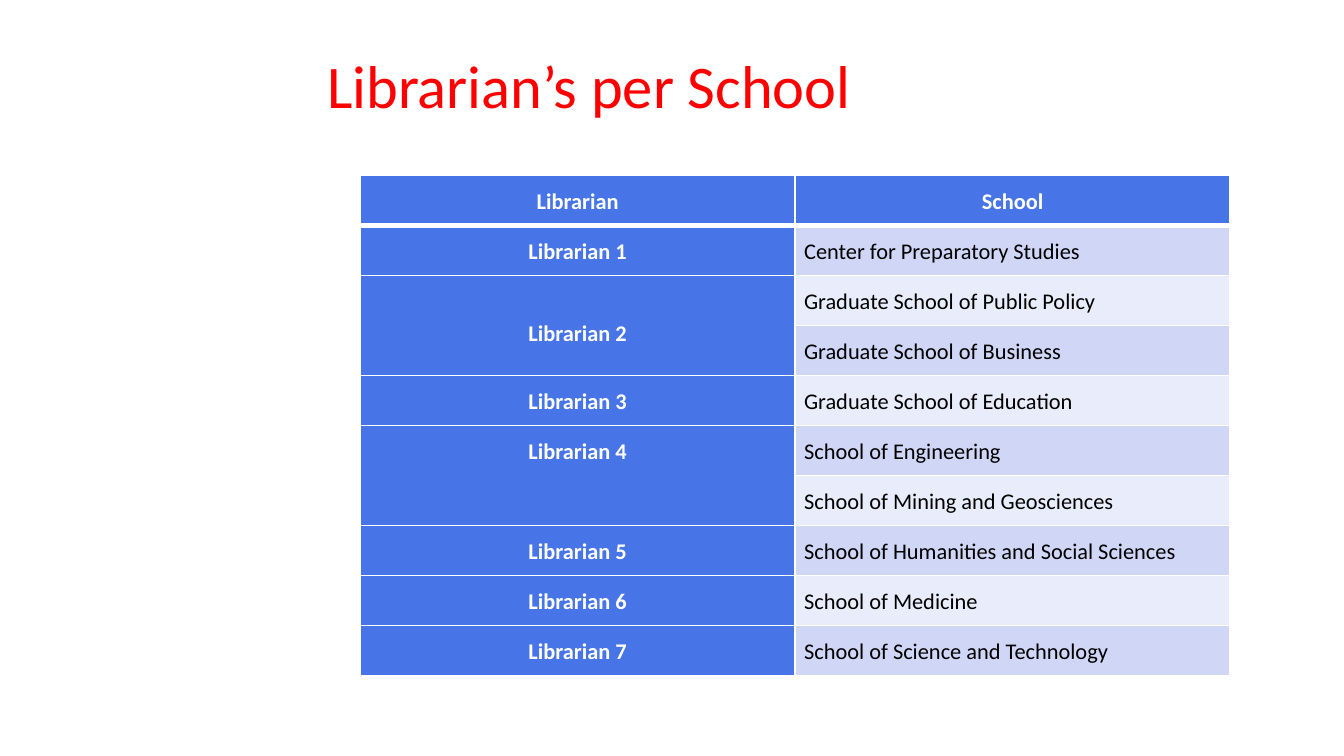
from lxml import etree
from pptx import Presentation
from pptx.dml.color import RGBColor
from pptx.enum import text
from pptx.oxml import ns
from pptx.util import Pt

WHITE, BLUE = "FFFFFF", "4775E7"
BANDS = "CFD6F6", "E9ECFA"
PAD = 4.8
GROUPS = [
    ("Librarian 1", ["Center for Preparatory Studies"]),
    ("Librarian 2", ["Graduate School of Public Policy",
                     "Graduate School of Business"]),
    ("Librarian 3", ["Graduate School of Education"]),
    ("Librarian 4", ["School of Engineering",
                     "School of Mining and Geosciences"]),
    ("Librarian 5", ["School of Humanities and Social Sciences"]),
    ("Librarian 6", ["School of Medicine"]),
    ("Librarian 7", ["School of Science and Technology"]),
]


def color(code):
    return RGBColor.from_string(code)


def style(para, size, code, bold, align):
    para.alignment = align
    font = para.runs[0].font
    font.name, font.size, font.bold = "Calibri", Pt(size), bold
    font.color.rgb = color(code)


def edge(cell, low=1, top=1):
    """Draw white borders; low and top are the bottom and top widths."""
    props = cell._tc.get_or_add_tcPr()
    widths = {"L": 1, "R": 1, "T": top, "B": low}
    for spot, (side, width) in enumerate(widths.items()):
        line = etree.Element(ns.qn("a:ln" + side), w=str(Pt(width)))
        fill = etree.SubElement(line, ns.qn("a:solidFill"))
        etree.SubElement(fill, ns.qn("a:srgbClr"), val=WHITE)
        props.insert(spot, line)


def paint(cell, fill, low=1, top=1):
    cell.fill.solid()
    cell.fill.fore_color.rgb = color(fill)
    cell.margin_left = cell.margin_right = Pt(PAD)
    cell.margin_top = cell.margin_bottom = Pt(PAD)
    edge(cell, low, top)


def write(cell, words, head):
    cell.text_frame.text = words
    para = cell.text_frame.paragraphs[0]
    para.line_spacing = 1.15
    align = text.PP_ALIGN.CENTER if head else text.PP_ALIGN.LEFT
    style(para, 12, WHITE if head else "000000", head, align)


def add_title(slide, words, left, top, width, height):
    title = slide.shapes.title
    title.left, title.top = Pt(left), Pt(top)
    title.width, title.height = Pt(width), Pt(height)
    frame = title.text_frame
    frame.text = words
    frame.word_wrap = True
    frame.auto_size = text.MSO_AUTO_SIZE.NONE
    frame.vertical_anchor = text.MSO_ANCHOR.MIDDLE
    style(frame.paragraphs[0], 32.4, "FF0000", False, text.PP_ALIGN.LEFT)


def add_grid(slide, left, top, width, height):
    count = 1 + sum(len(schools) for _, schools in GROUPS)
    table = slide.shapes.add_table(
        count, 2, Pt(left), Pt(top), Pt(width), Pt(height)).table
    for col, words in enumerate(("Librarian", "School")):
        paint(table.cell(0, col), BLUE, low=3)
        write(table.cell(0, col), words, True)
    row = 1
    for name, schools in GROUPS:
        first = table.cell(row, 0)
        for step, school in enumerate(schools, row):
            above = 3 if step == 1 else 1
            paint(table.cell(step, 0), BLUE, top=above)
            paint(table.cell(step, 1), BANDS[(step - 1) % 2], top=above)
            write(table.cell(step, 1), school, False)
        write(first, name, True)
        if len(schools) > 1:
            first.merge(table.cell(row + len(schools) - 1, 0))
        if name == "Librarian 2":
            first.margin_top = Pt(PAD + 17)  # sits one line lower
        row += len(schools)


def main():
    deck = Presentation()
    deck.slide_width, deck.slide_height = Pt(720), Pt(405)
    slide = deck.slides.add_slide(deck.slide_layouts[5])
    add_title(slide, "Librarian’s per School", 168, 22.5, 517, 45)
    add_grid(slide, 193, 94, 466, 268)
    deck.save("out.pptx")


if __name__ == "__main__":
    main()
